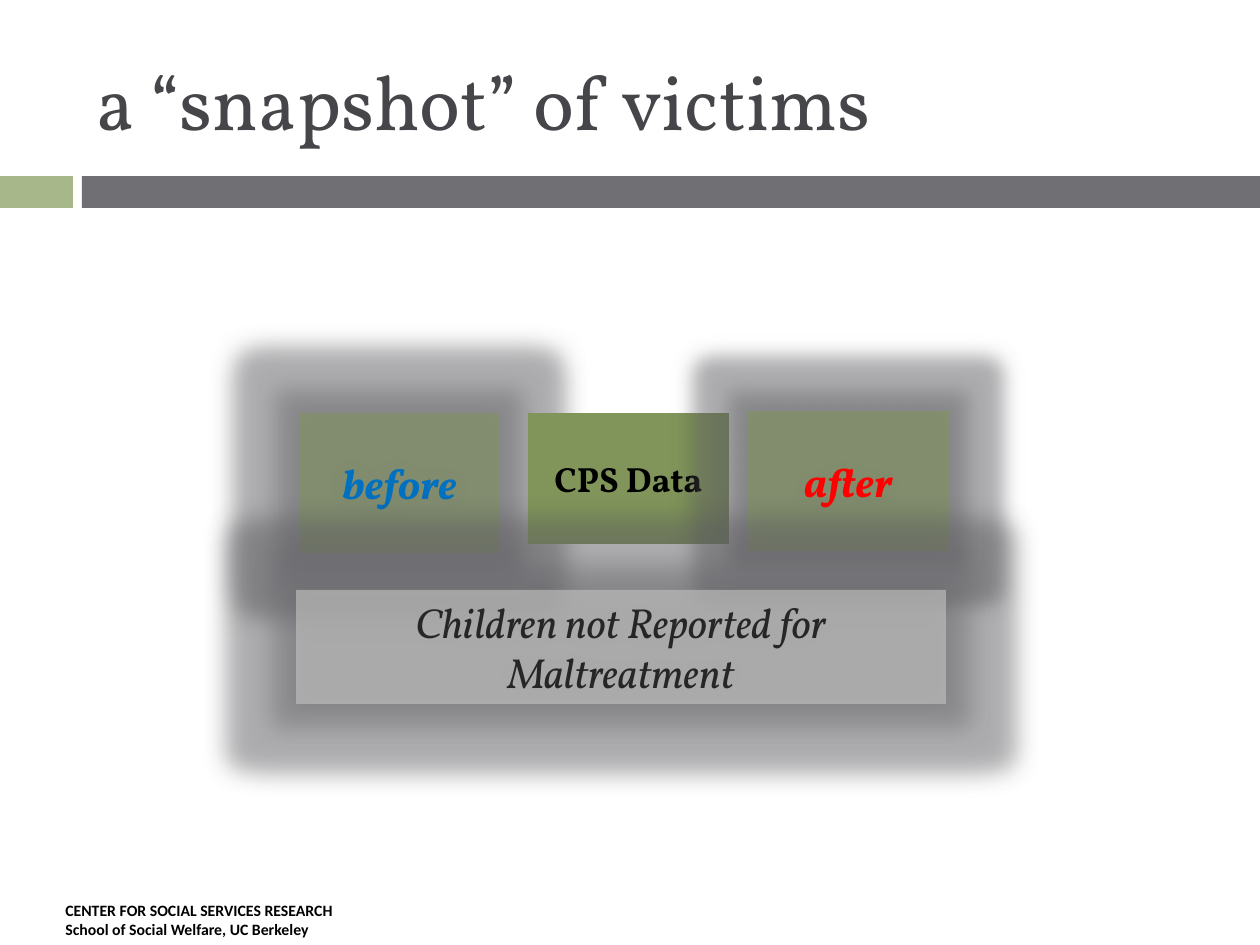
from lxml import etree
from pptx import Presentation
from pptx import util as u
from pptx.dml.color import RGBColor
from pptx.enum import shapes, text
from pptx.oxml import ns

PX = 914400 / 126
GREEN = RGBColor(0x81, 0x95, 0x5B)
PALE_GREEN = RGBColor(0xA7, 0xB7, 0x89)
SLATE = RGBColor(0x6F, 0x6F, 0x74)
SILVER = RGBColor(0xBF, 0xBF, 0xBF)
TITLE_GREY = RGBColor(0x46, 0x46, 0x4A)
INK = RGBColor(0x26, 0x26, 0x26)
BLACK = RGBColor(0, 0, 0)
BLUE = RGBColor(0x00, 0x70, 0xC0)
RED = RGBColor(0xFF, 0, 0)


def px(n):
    return u.Emu(round(n * PX))


def child(parent, tag, **attrs):
    el = etree.SubElement(parent, ns.qn("a:" + tag))
    for key, value in attrs.items():
        el.set(key, str(value))
    return el


def write(sp, words, size, color, font="Vollkorn", bold=False, italic=False,
          align=text.PP_ALIGN.CENTER, anchor=text.MSO_ANCHOR.MIDDLE):
    tf = sp.text_frame
    tf.word_wrap = True
    tf.vertical_anchor = anchor
    p = tf.paragraphs[0]
    p.text = words
    p.alignment = align
    for r in p.runs:
        f = r.font
        f.name, f.size, f.bold, f.italic = font, u.Pt(size), bold, italic
        f.color.rgb = color


class Deck:
    """Holds the style and the current slide."""

    def __init__(self):
        self.prs = Presentation()
        self.prs.slide_width, self.prs.slide_height = px(1260), px(945)
        self.s = self.prs.slides.add_slide(self.prs.slide_layouts[6])

    def label(self, box, words, size, color, **fmt):
        sp = self.s.shapes.add_textbox(*map(px, box))
        write(sp, words, size, color, align=text.PP_ALIGN.LEFT, **fmt)

    def rect(self, box, fill, alpha=100, glow=0):
        sp = self.s.shapes.add_shape(shapes.MSO_SHAPE.RECTANGLE, *map(px, box))
        sp.shadow.inherit = False
        sp.fill.solid()
        sp.fill.fore_color.rgb = fill
        sp.line.fill.background()
        props = sp._element.spPr
        if alpha < 100:
            child(props.find(".//" + ns.qn("a:srgbClr")), "alpha", val=alpha * 1000)
        if glow:
            effects = props.find(ns.qn("a:effectLst"))
            halo = child(effects, "glow", rad=px(glow))
            child(child(halo, "srgbClr", val=SLATE), "alpha", val=40000)
            shadow = child(effects, "outerShdw", blurRad=px(18), dist=0, algn="ctr", rotWithShape=0)
            child(child(shadow, "srgbClr", val=BLACK), "alpha", val=40000)
        return sp

    def panel(self, box, fill, words, size, color, alpha=100, glow=0, **fmt):
        write(self.rect(box, fill, alpha, glow), words, size, color, **fmt)


def main():
    deck = Deck()
    deck.rect((0, 176, 73, 32), PALE_GREEN)
    deck.rect((82, 176, 1178, 32), SLATE)
    deck.label((53, 895, 368, 50),
               "CENTER FOR SOCIAL SERVICES RESEARCH\vSchool of Social Welfare, UC Berkeley",
               9, BLACK, font="Calibri", bold=True, anchor=text.MSO_ANCHOR.TOP)
    deck.label((84, 32, 1124, 136), "a “snapshot” of victims", 44, TITLE_GREY)
    deck.panel((299, 413, 201, 140), GREEN, "before", 24, BLUE,
               alpha=53, glow=44, bold=True, italic=True)
    deck.panel((528, 413, 201, 131), GREEN, "CPS Data", 20, BLACK, bold=True)
    deck.panel((748, 411, 201, 140), GREEN, "after", 24, RED,
               alpha=56, glow=36, bold=True, italic=True)
    deck.panel((296, 590, 650, 114), SILVER, "Children not Reported for Maltreatment",
               24, INK, alpha=66, glow=46, italic=True)
    deck.prs.save("out.pptx")


if __name__ == "__main__":
    main()
